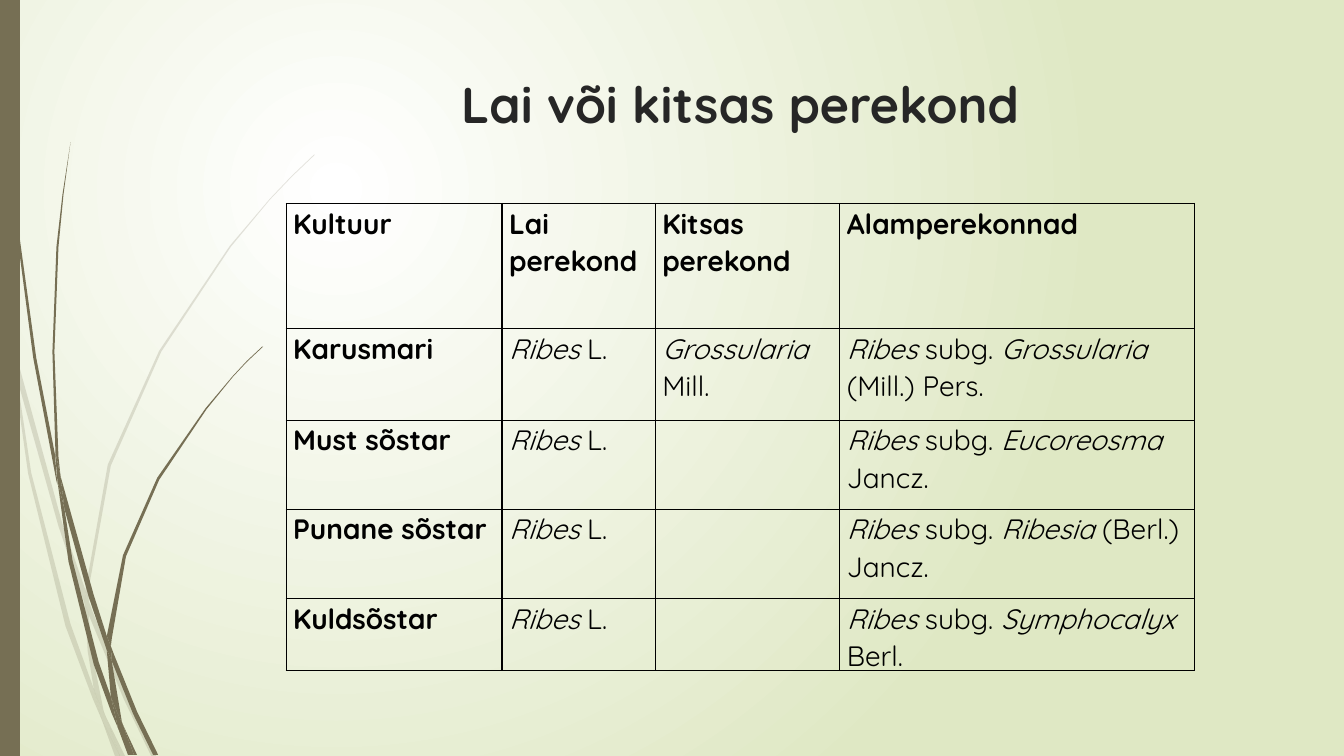
from lxml.etree import SubElement
from pptx import Presentation
from pptx.dml.color import RGBColor
from pptx.enum.shapes import MSO_SHAPE
from pptx.enum.text import MSO_ANCHOR, PP_ALIGN
from pptx.oxml.ns import qn
from pptx.util import Cm, Pt

COLOURS = {"glow": "FFFFFF", "meadow": "DFE8C4", "stem": "766F54",
           "title": "262626", "text": "000000"}
FONT = "Quicksand"

# Blade outlines: x, y pairs in hundredths of an inch
BLADE_UNIT = Cm(0.0254)
PALE_BLADES = [
    [(11, 350), (9, 322), (0, 282), (0, 299), (10, 344)],
    [(58, 522), (84, 599), (85, 586), (62, 520), (14, 345), (17, 376)],
    [(92, 607), (88, 596), (88, 610), (123, 694), (150, 750), (155, 750), (127, 692)],
    [(119, 750), (124, 750), (105, 711)],
    [(93, 683), (70, 619), (31, 469), (17, 376), (11, 350), (28, 470), (65, 621),
     (92, 693), (101, 714), (99, 707)],
    [(84, 599), (87, 646), (93, 683), (96, 692), (105, 711), (103, 706), (91, 646),
     (88, 610), (88, 608)],
    [(88, 584), (110, 462), (160, 349), (229, 245), (268, 198), (290, 175), (312, 154),
     (312, 153), (289, 175), (268, 197), (228, 244), (158, 348), (107, 461), (85, 584),
     (85, 586), (88, 596)],
    [(101, 714), (114, 750), (119, 750)],
    [(88, 608), (88, 610), (88, 596), (85, 586), (84, 599)],
    [(96, 692), (93, 683), (99, 707), (101, 714), (119, 750), (105, 711)],
]
DARK_BLADES = [
    [(7, 110), (17, 233), (33, 355), (56, 477), (57, 481), (55, 457), (55, 453), (36, 355),
     (19, 232), (8, 109), (5, 48), (4, 0), (3, 0), (4, 48)],
    [(88, 592), (106, 645), (106, 631), (93, 590), (60, 472), (64, 505)],
    [(113, 649), (110, 641), (111, 656), (132, 708), (152, 749), (157, 749), (136, 706)],
    [(110, 691), (98, 657), (72, 556), (64, 505), (57, 477), (68, 557), (93, 659),
     (111, 708), (117, 722), (116, 717)],
    [(60, 472), (58, 453), (54, 349), (58, 245), (63, 193), (70, 141), (62, 193),
     (56, 245), (52, 349), (55, 449)],
    [(133, 749), (136, 749), (122, 719)],
    [(57, 477), (64, 505), (60, 472), (55, 449), (55, 453)],
    [(111, 633), (125, 552), (158, 476), (205, 406), (231, 374), (245, 359), (261, 344),
     (260, 344), (245, 358), (231, 373), (204, 405), (156, 474), (122, 551), (106, 631),
     (110, 641)],
    [(117, 722), (127, 749), (131, 749)],
    [(106, 645), (110, 691), (116, 706), (122, 719), (121, 716), (111, 656), (109, 651)],
    [(106, 645), (109, 651), (111, 656), (110, 641), (106, 631)],
    [(116, 706), (110, 691), (116, 717), (117, 722), (130, 749), (133, 749), (122, 719)],
]

# Asterisks enclose italic text
GENERA = [
    ["Kultuur", "Lai perekond", "Kitsas perekond", "Alamperekonnad"],
    ["Karusmari", "*Ribes* L.", "*Grossularia *Mill.",
     "*Ribes *subg. *Grossularia* (Mill.) Pers."],
    ["Must sõstar", "*Ribes* L.", "", "*Ribes *subg. *Eucoreosma *Jancz."],
    ["Punane sõstar", "*Ribes* L.", "", "*Ribes *subg. *Ribesia* (Berl.) Jancz."],
    ["Kuldsõstar", "*Ribes* L.", "", "*Ribes *subg. *Symphocalyx *Berl."],
]
COLUMN_WIDTHS = [5.44, 3.86, 4.65, 8.94]
ROW_HEIGHTS = [3.15, 2.31, 2.24, 2.26, 1.78]


def set_attributes(target, values):
    for name, value in values.items():
        setattr(target, name, value)


class SlideBuilder:
    def __init__(self, slide):
        self.slide = slide
        self.shapes = slide.shapes

    def colour(self, name):
        return RGBColor.from_string(COLOURS[name])

    def background(self, inner, outer):
        """Fill the background with a glow centred in the upper left."""
        fill = self.slide.background.fill
        fill.gradient()
        for stop, name in zip(fill.gradient_stops, (inner, outer)):
            stop.color.rgb = self.colour(name)
        gradient = self.slide.element.find(".//" + qn("a:gradFill"))
        gradient.remove(gradient.find(qn("a:lin")))
        circle = SubElement(gradient, qn("a:path"), {"path": "circle"})
        SubElement(circle, qn("a:fillToRect"),
                   {"l": "50000", "t": "50000", "r": "100000", "b": "100000"})

    def paint(self, shape, colour, opacity=100):
        shape.shadow.inherit = False
        shape.line.fill.background()
        shape.fill.solid()
        shape.fill.fore_color.rgb = self.colour(colour)
        if opacity < 100:
            tint = shape.element.spPr.find(".//" + qn("a:srgbClr"))
            SubElement(tint, qn("a:alpha"), {"val": str(opacity * 1000)})

    def blade(self, points, colour, opacity):
        outline = self.shapes.build_freeform(*points[0], scale=BLADE_UNIT)
        outline.add_line_segments(points[1:], close=True)
        self.paint(outline.convert_to_shape(), colour, opacity)

    def bar(self, left, top, width, height, colour):
        shape = self.shapes.add_shape(MSO_SHAPE.RECTANGLE, Cm(left), Cm(top),
                                      Cm(width), Cm(height))
        self.paint(shape, colour)

    def add_runs(self, paragraph, text, size, colour, bold):
        for index, part in enumerate(text.split("*")):
            if part:
                run = paragraph.add_run()
                run.text = part
                set_attributes(run.font, {"name": FONT, "size": Pt(size), "bold": bold,
                                          "italic": index % 2 == 1})
                run.font.color.rgb = self.colour(colour)

    def title(self, text, left, top, width, height):
        frame = self.shapes.add_textbox(Cm(left), Cm(top), Cm(width), Cm(height)).text_frame
        set_attributes(frame, {"word_wrap": True, "vertical_anchor": MSO_ANCHOR.TOP})
        paragraph = frame.paragraphs[0]
        paragraph.alignment = PP_ALIGN.CENTER
        self.add_runs(paragraph, text, 36, "title", True)

    def border(self, cell):
        properties = cell._tc.get_or_add_tcPr()
        for side in ("a:lnL", "a:lnR", "a:lnT", "a:lnB"):
            line = SubElement(properties, qn(side), {"w": str(Pt(1))})
            fill = SubElement(line, qn("a:solidFill"))
            SubElement(fill, qn("a:srgbClr"), {"val": COLOURS["text"]})

    def table(self, rows, left, top, widths, heights):
        table = self.shapes.add_table(len(rows), len(widths), Cm(left), Cm(top),
                                      Cm(sum(widths)), Cm(sum(heights))).table
        set_attributes(table, {"first_row": False, "horz_banding": False})
        for column, width in zip(table.columns, widths):
            column.width = Cm(width)
        for row, height in zip(table.rows, heights):
            row.height = Cm(height)
        for row_index, texts in enumerate(rows):
            for column_index, text in enumerate(texts):
                cell = table.cell(row_index, column_index)
                set_attributes(cell, {"margin_left": Cm(0.18), "margin_right": Cm(0.18),
                                      "margin_top": 0, "margin_bottom": 0})
                self.border(cell)
                cell.fill.background()
                paragraph = cell.text_frame.paragraphs[0]
                paragraph.line_spacing = 1.07
                self.add_runs(paragraph, text, 20, "text", row_index == 0 or column_index == 0)


def main():
    presentation = Presentation()
    set_attributes(presentation, {"slide_width": Cm(33.87), "slide_height": Cm(19.05)})
    builder = SlideBuilder(presentation.slides.add_slide(presentation.slide_layouts[6]))
    builder.background("glow", "meadow")
    for blades, opacity in ((PALE_BLADES, 20), (DARK_BLADES, 100)):
        for points in blades:
            builder.blade(points, "stem", opacity)
    builder.bar(0, 0, 0.5, 19.05, "stem")
    builder.title("Lai või kitsas perekond", 7.21, 1.73, 22.89, 3.56)
    builder.table(GENERA, 7.21, 5.13, COLUMN_WIDTHS, ROW_HEIGHTS)
    presentation.save("out.pptx")


if __name__ == "__main__":
    main()
